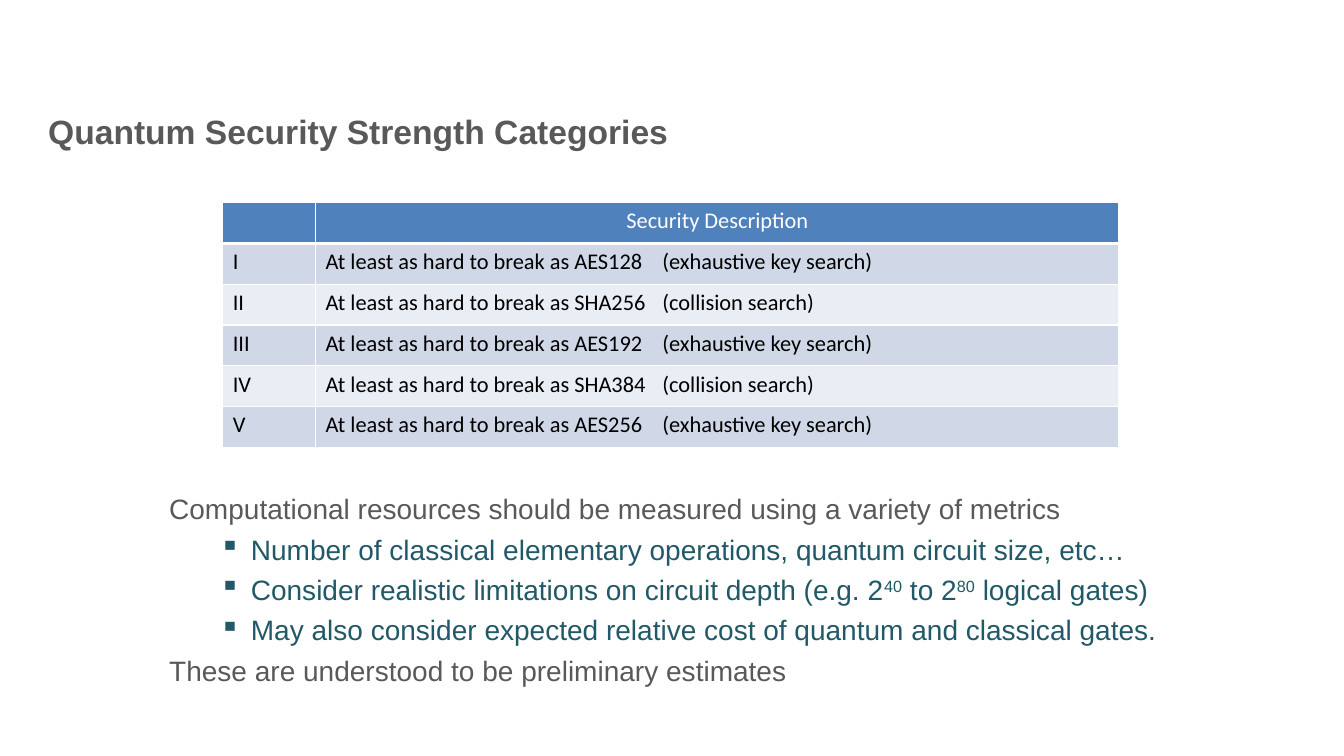
"""Build the slide on quantum security strength categories."""
from lxml import etree
from pptx import Presentation
from pptx.dml.color import RGBColor
from pptx.enum import text
from pptx.oxml import ns
from pptx.util import Inches, Pt

GREY = RGBColor(0x59, 0x59, 0x59)
TEAL = RGBColor(0x21, 0x59, 0x68)
WHITE = RGBColor(0xFF, 0xFF, 0xFF)
BLACK = RGBColor(0x00, 0x00, 0x00)
HEADER_BLUE = RGBColor(0x4F, 0x81, 0xBD)
BAND_COLOURS = (RGBColor(0xD0, 0xD8, 0xE8), RGBColor(0xE9, 0xED, 0xF4))

TITLE_FORMAT = {"name": "Arial", "size": Pt(24), "bold": True}
BODY_FORMAT = {"name": "Arial", "size": Pt(20)}
CELL_FORMAT = {"name": "Calibri", "size": Pt(16)}

CATEGORIES = [
    ("I", "AES128", "exhaustive key"),
    ("II", "SHA256", "collision"),
    ("III", "AES192", "exhaustive key"),
    ("IV", "SHA384", "collision"),
    ("V", "AES256", "exhaustive key"),
]
SEARCH_TAB = Inches(3.34)

STATEMENTS = [
    (0, ["Computational resources should be measured using a variety of metrics"]),
    (1, ["Number of classical elementary operations, quantum circuit size, etc…"]),
    (1, ["Consider realistic limitations on circuit depth (e.g. 2", "40",
         " to 2", "80", " logical gates)"]),
    (1, ["May also consider expected relative cost of quantum and classical gates."]),
    (0, ["These are understood to be preliminary estimates"]),
]
LEVELS = [
    {"colour": GREY, "margin": Inches(0.38), "indent": Inches(-0.38), "bullet": None},
    {"colour": TEAL, "margin": Inches(0.81), "indent": Inches(-0.31), "bullet": "▪"},
]


def add_run(paragraph, wording, colour, font_format):
    """Add a run in the given colour and font format, and return it."""
    run = paragraph.add_run()
    run.text = wording
    for name, value in font_format.items():
        setattr(run.font, name, value)
    run.font.color.rgb = colour
    return run


def add_text_frame(slide, box, anchor):
    """Add a wrapping text box and return its text frame."""
    frame = slide.shapes.add_textbox(*map(Inches, box)).text_frame
    frame.word_wrap = True
    frame.vertical_anchor = anchor
    return frame


def add_title(slide, box):
    """Place the slide title at the bottom of its box."""
    paragraph = add_text_frame(slide, box, text.MSO_ANCHOR.BOTTOM).paragraphs[0]
    paragraph.line_spacing = Pt(26)
    add_run(paragraph, "Quantum Security Strength Categories", GREY, TITLE_FORMAT)


def add_statements(slide, box):
    """Place the statements, with every second run of a line raised."""
    frame = add_text_frame(slide, box, text.MSO_ANCHOR.TOP)
    for index, (level, pieces) in enumerate(STATEMENTS):
        style = LEVELS[level]
        paragraph = frame.add_paragraph() if index else frame.paragraphs[0]
        paragraph.level = level
        if index:
            paragraph.space_before = Pt(4.8)
        properties = paragraph._p.get_or_add_pPr()
        properties.set("marL", str(style["margin"]))
        properties.set("indent", str(style["indent"]))
        if style["bullet"]:
            bullet = etree.SubElement(properties, ns.qn("a:buChar"))
            bullet.set("char", style["bullet"])
        for position, piece in enumerate(pieces):
            run = add_run(paragraph, piece, style["colour"], BODY_FORMAT)
            if position % 2:
                run._r.get_or_add_rPr().set("baseline", "30000")


def style_cell(cell, fill, bottom_width):
    """Fill a cell and draw its white borders."""
    properties = cell._tc.get_or_add_tcPr()
    for side in "LRTB":
        border = etree.SubElement(properties, ns.qn(f"a:ln{side}"))
        border.set("w", str(Pt(bottom_width if side == "B" else 1)))
        solid = etree.SubElement(border, ns.qn("a:solidFill"))
        etree.SubElement(solid, ns.qn("a:srgbClr")).set("val", str(WHITE))
    cell.fill.solid()
    cell.fill.fore_color.rgb = fill


def add_category_table(slide, box):
    """Place the table of categories with a header and banded rows."""
    rows = [("", "Security Description")]
    rows += [(number, f"At least as hard to break as {target}\t({search} search)")
             for number, target, search in CATEGORIES]
    left, top, width, height = map(Inches, box)
    table = slide.shapes.add_table(len(rows), 2, left, top, width, height).table
    table.columns[0].width = Inches(0.92)
    table.columns[1].width = width - Inches(0.92)
    for row, wordings in enumerate(rows):
        for column, wording in enumerate(wordings):
            cell = table.cell(row, column)
            paragraph = cell.text_frame.paragraphs[0]
            if row == 0:
                style_cell(cell, HEADER_BLUE, 3)
                paragraph.alignment = text.PP_ALIGN.CENTER
            else:
                style_cell(cell, BAND_COLOURS[(row - 1) % 2], 1)
            if "\t" in wording:
                tabs = etree.SubElement(paragraph._p.get_or_add_pPr(), ns.qn("a:tabLst"))
                etree.SubElement(tabs, ns.qn("a:tab"), pos=str(SEARCH_TAB), algn="l")
            if wording:
                add_run(paragraph, wording, BLACK if row else WHITE, CELL_FORMAT)


def main():
    """Build and save the presentation."""
    presentation = Presentation()
    presentation.slide_width = Inches(13.33)
    presentation.slide_height = Inches(7.5)
    slide = presentation.slides.add_slide(presentation.slide_layouts[6])
    add_title(slide, (0.38, 0.72, 12.33, 0.83))
    add_statements(slide, (1.58, 4.83, 10.67, 2.07))
    add_category_table(slide, (2.21, 2.01, 8.89, 2.43))
    presentation.save("out.pptx")


if __name__ == "__main__":
    main()
